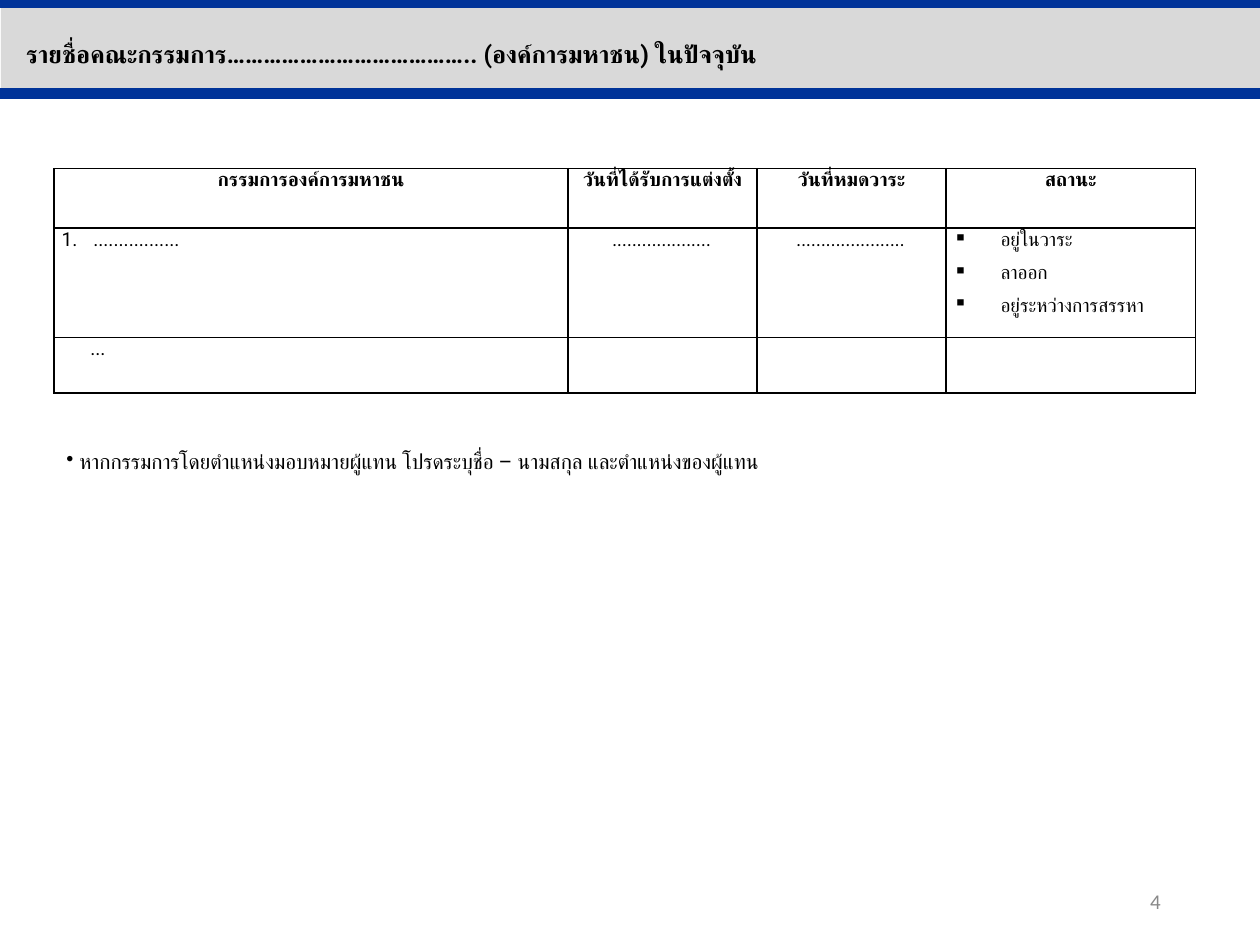
from dataclasses import dataclass

from lxml import etree
from pptx import Presentation
from pptx.dml.color import RGBColor
from pptx.enum.shapes import MSO_CONNECTOR, MSO_SHAPE
from pptx.enum.text import MSO_ANCHOR, PP_ALIGN
from pptx.oxml.ns import qn
from pptx.util import Cm, Pt

LEFT, MID, RIGHT = PP_ALIGN.LEFT, PP_ALIGN.CENTER, PP_ALIGN.RIGHT
TOP, CENTRE = MSO_ANCHOR.TOP, MSO_ANCHOR.MIDDLE
RECT, LINE = MSO_SHAPE.RECTANGLE, MSO_CONNECTOR.STRAIGHT


@dataclass(frozen=True)
class Theme:
    ink: RGBColor = RGBColor(0, 0, 0)
    band: RGBColor = RGBColor(0xD9, 0xD9, 0xD9)
    rule: RGBColor = RGBColor(0x00, 0x33, 0x99)
    page: RGBColor = RGBColor(0x89, 0x89, 0x89)
    face: str = "Roboto"
    plain: str = "Calibri"
    title: Pt = Pt(14)
    note: Pt = Pt(12)
    cell: Pt = Pt(11)


theme = Theme()


def style(par, size, face=theme.face, color=theme.ink, bold=False, align=LEFT):
    font = par.font
    font.size, font.name, font.bold = size, face, bold
    font.color.rgb = color
    par.alignment = align
    props = par._p.get_or_add_pPr().find(qn("a:defRPr"))
    etree.SubElement(props, qn("a:cs"), typeface=face)


def indent(par, left, hang, tag=None, **mark):
    props = par._p.get_or_add_pPr()
    props.set("marL", str(Cm(left)))
    props.set("indent", str(-Cm(hang)))
    if tag:
        bullet = etree.Element(qn(tag), **mark)
        props.find(qn("a:defRPr")).addprevious(bullet)


deck = Presentation()
deck.slide_width, deck.slide_height = Cm(25.4), Cm(19.05)
slide = deck.slides.add_slide(deck.slide_layouts[6])
shapes = slide.shapes

# Title band between two rules
band = shapes.add_shape(RECT, Cm(0.02), Cm(0.13), Cm(25.38), Cm(1.73))
band.shadow.inherit = False
band.fill.solid()
band.fill.fore_color.rgb = theme.band
band.line.fill.background()

for y in (1.88, 0.05):
    rule = shapes.add_connector(LINE, 0, Cm(y), Cm(25.4), Cm(y))
    rule.line.color.rgb = theme.rule
    rule.line.width = Pt(6)
    etree.SubElement(rule._element.spPr, qn("a:effectLst"))

# Committee table
heads = ["กรรมการองค์การมหาชน", "วันที่ได้รับการแต่งตั้ง", "วันที่หมดวาระ", "สถานะ"]
first = [
    ".................",
    "....................",
    "......................",
    "อยู่ในวาระ\nลาออก\nอยู่ระหว่างการสรรหา",
]
rows = [heads, first, ["...", "", "", ""]]
widths = [10.36, 3.81, 3.81, 5.03]
heights = [1.2, 2.2, 1.12]

frame = shapes.add_table(3, 4, Cm(1.09), Cm(3.4), Cm(sum(widths)), Cm(sum(heights)))
grid = frame.table
for col, width in zip(grid.columns, widths):
    col.width = Cm(width)
for row, height in zip(grid.rows, heights):
    row.height = Cm(height)

for r, texts in enumerate(rows):
    for c, text in enumerate(texts):
        cell = grid.cell(r, c)
        cell.margin_left = cell.margin_right = Cm(0.15)
        cell.margin_top = cell.margin_bottom = 0
        cell.fill.background()
        props = cell._tc.get_or_add_tcPr()
        for i, side in enumerate(("a:lnL", "a:lnR", "a:lnT", "a:lnB")):
            edge = etree.Element(qn(side), w=str(Pt(1)))
            paint = etree.SubElement(edge, qn("a:solidFill"))
            etree.SubElement(paint, qn("a:srgbClr"), val=str(theme.ink))
            props.insert(i, edge)

        cell.text = text
        date = r == 1 and c in (1, 2)
        for par in cell.text_frame.paragraphs:
            style(par, theme.cell, bold=r == 0, align=MID if r == 0 or date else LEFT)
            par.font.italic = date
            par.space_before = Pt(3)
            if r or c in (0, 3):
                par.space_after = Pt(3)

# List marks in the table
indent(grid.cell(1, 0).text_frame.paragraphs[0], 0.64, 0.64,
       "a:buAutoNum", type="arabicPeriod")
for par in grid.cell(1, 3).text_frame.paragraphs:
    indent(par, 0.95, 0.95, "a:buChar", char="▪")
indent(grid.cell(2, 0).text_frame.paragraphs[0], 0.58, 0)

# Page number, note and title
labels = [
    ("4", (17.93, 17.65, 5.72, 1.02), CENTRE,
     dict(size=theme.note, face=theme.plain, color=theme.page, align=RIGHT)),
    ("หากกรรมการโดยตำแหน่งมอบหมายผู้แทน โปรดระบุชื่อ – นามสกุล และตำแหน่งของผู้แทน",
     (1.09, 8.92, 16.69, 1.27), TOP, dict(size=theme.note)),
    ("รายชื่อคณะกรรมการ………………………………….. (องค์การมหาชน) ในปัจจุบัน",
     (0.28, 0.66, 18.42, 0.86), TOP, dict(size=theme.title, bold=True)),
]
for text, place, anchor, look in labels:
    box = shapes.add_textbox(*map(Cm, place)).text_frame
    box.word_wrap = True
    box.vertical_anchor = anchor
    box.text = text
    par = box.paragraphs[0]
    style(par, **look)
    if text.startswith("หาก"):
        indent(par, 0.26, 0.26, "a:buChar", char="•")

deck.save("out.pptx")
